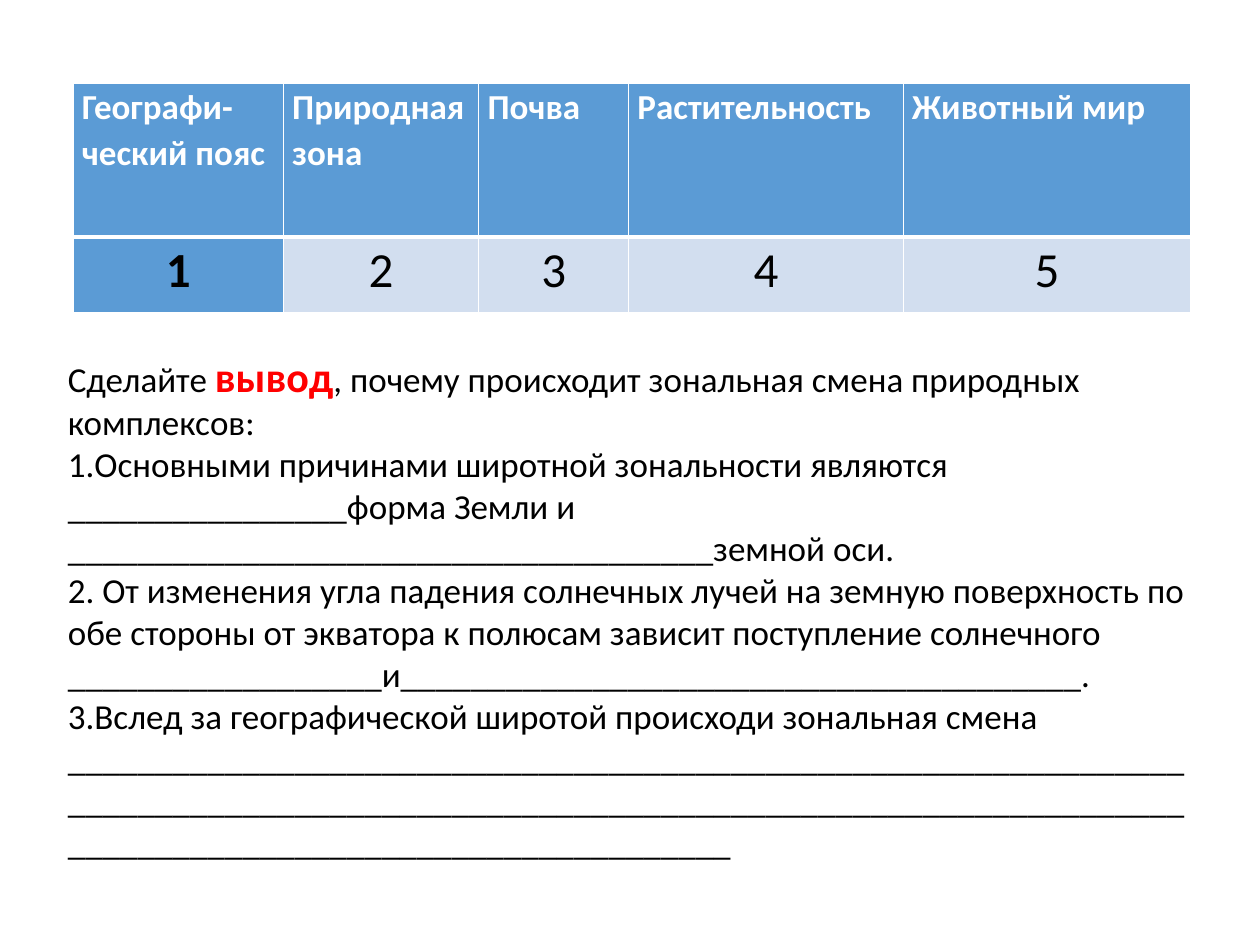
"""Build a slide with a table of natural zones and a fill-in conclusion."""
from lxml.etree import SubElement
from pptx import Presentation
from pptx.dml.color import RGBColor as RGB
from pptx.enum.text import MSO_AUTO_SIZE as Fit, PP_ALIGN as Align
from pptx.oxml.ns import qn
from pptx.util import Inches as In, Pt

HUE = {"head": "5B9BD5", "body": "D2DEEF", "line": "FFFFFF", "ink": "000000", "mark": "FF0000"}
COLS = [1.67, 1.55, 1.19, 2.18, 2.28]
ROWS = [1.22, 0.6]
HEADS = ["Географи-ческий пояс", "Природная зона", "Почва", "Растительность", "Животный мир"]
NOTES = [
    [("Сделайте ", 20, "ink", False), ("вывод", 24, "mark", True),
     (", почему происходит зональная смена природных комплексов:", 20, "ink", False)],
    [("1.Основными причинами широтной зональности являются " + "_" * 16
      + "форма Земли и " + "_" * 37 + "земной оси.", 20, "ink", False)],
    [("2. От изменения угла падения солнечных лучей на земную поверхность по обе стороны "
      "от экватора к полюсам зависит поступление солнечного " + "_" * 18
      + "и" + "_" * 39 + ".", 20, "ink", False)],
    [("3.Вслед за географической широтой происходи зональная смена " + "_" * 166,
      20, "ink", False)],
]


def add_run(para, text, size, hue, bold):
    run = para.add_run()
    run.text = text
    run.font.name = "Calibri"
    run.font.size = Pt(size)
    run.font.bold = bold
    run.font.color.rgb = RGB.from_string(HUE[hue])


def edge(cell, row):
    props = cell._tc.get_or_add_tcPr()
    for i, side in enumerate("LRTB"):
        wide = 3 if (row, side) in ((0, "B"), (1, "T")) else 1
        line = SubElement(props, qn(f"a:ln{side}"), w=str(Pt(wide)))
        fill = SubElement(line, qn("a:solidFill"))
        SubElement(fill, qn("a:srgbClr"), val=HUE["line"])
        props.insert(i, line)


prs = Presentation()
prs.slide_width, prs.slide_height = In(10), In(7.5)
slide = prs.slides.add_slide(prs.slide_layouts[6])

table = slide.shapes.add_table(len(ROWS), len(COLS), In(0.58), In(0.66),
                               In(sum(COLS)), In(sum(ROWS))).table
for col, wide in zip(table.columns, COLS):
    col.width = In(wide)
for row, high in zip(table.rows, ROWS):
    row.height = In(high)

for r in range(len(ROWS)):
    for c, head in enumerate(HEADS):
        cell = table.cell(r, c)
        cell.margin_left = cell.margin_right = In(0.07)
        cell.margin_top = cell.margin_bottom = 0
        cell.fill.solid()
        cell.fill.fore_color.rgb = RGB.from_string(HUE["body" if r and c else "head"])
        edge(cell, r)
        para = cell.text_frame.paragraphs[0]
        para.line_spacing = 1.07
        if r:
            para.alignment = Align.CENTER
            add_run(para, str(c + 1), 28, "ink", c == 0)
        else:
            add_run(para, head, 20, "line", True)

frame = slide.shapes.add_textbox(In(0.44), In(2.73), In(9.13), In(4.21)).text_frame
frame.word_wrap = True
frame.auto_size = Fit.SHAPE_TO_FIT_TEXT
for i, note in enumerate(NOTES):
    para = frame.add_paragraph() if i else frame.paragraphs[0]
    for part in note:
        add_run(para, *part)

prs.save("out.pptx")
